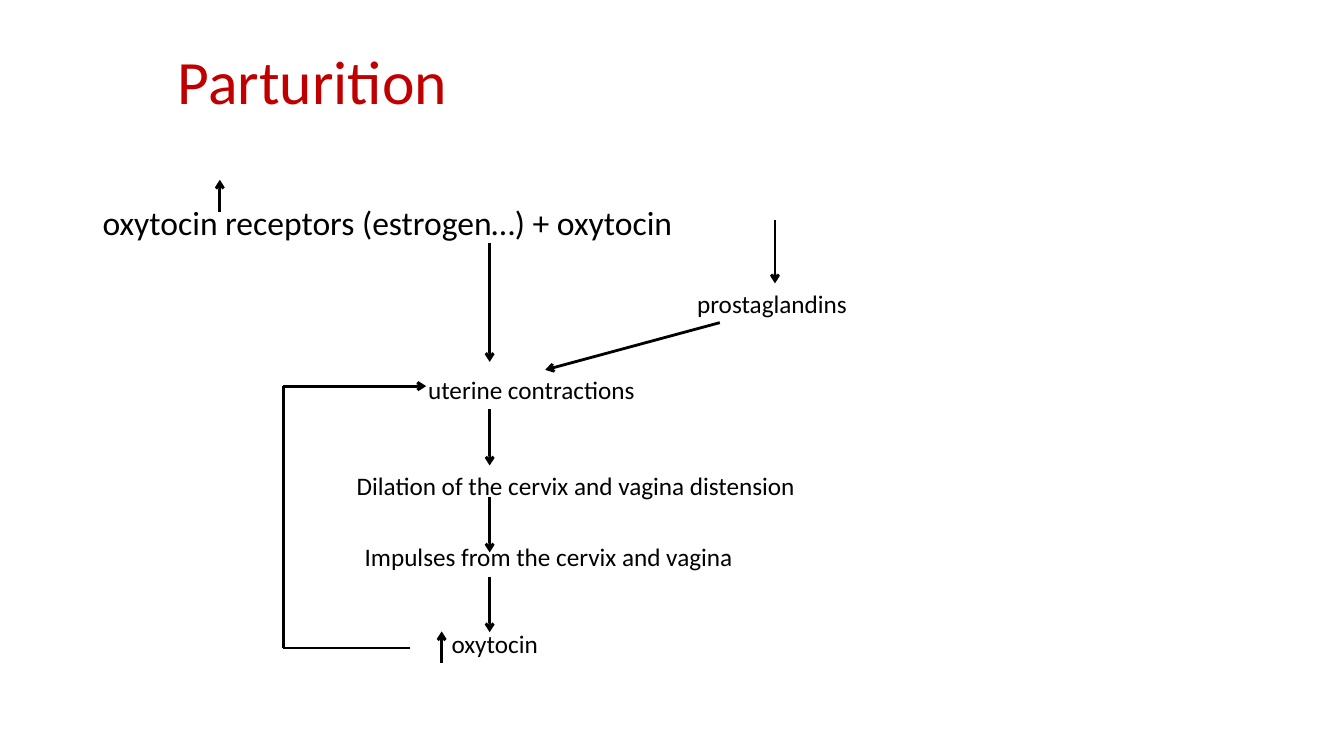
import dataclasses

import pptx
import pptx.dml.color
import pptx.enum.shapes
import pptx.enum.text
import pptx.oxml
import pptx.oxml.ns
import pptx.util
from pptx.util import Cm


@dataclasses.dataclass(frozen=True)
class Theme:
    """Colours, type sizes and line width of the slide."""
    font: str = "Calibri"
    title_color: str = "C00000"
    ink: str = "000000"
    title_size: int = 44
    body_size: int = 24
    label_size: int = 18
    line_width: int = 2


THEME = Theme()


def add_element(parent, tag, **attrs):
    """Append a DrawingML element to the parent."""
    el = pptx.oxml.parse_xml(f"<{tag} {pptx.oxml.ns.nsdecls('a')}/>")
    for name, value in attrs.items():
        el.set(name, value)
    parent.append(el)


def write(shape, text, size, color):
    """Put one left-aligned paragraph in the shape and return it."""
    tf = shape.text_frame
    tf.word_wrap = True
    tf.text = text
    p = tf.paragraphs[0]
    p.alignment = pptx.enum.text.PP_ALIGN.LEFT
    p.font.name = THEME.font
    p.font.size = pptx.util.Pt(size)
    p.font.color.rgb = pptx.dml.color.RGBColor.from_string(color)
    return p


def fill_placeholder(shape, box, text, size, color):
    """Move a placeholder to the box and write its text."""
    shape.left, shape.top, shape.width, shape.height = map(Cm, box)
    p = write(shape, text, size, color)
    p.line_spacing = 0.9
    shape.text_frame.auto_size = pptx.enum.text.MSO_AUTO_SIZE.NONE
    return p


def add_label(s, text, left, top, width):
    """Add one step of the flow as a text box."""
    box = s.shapes.add_textbox(Cm(left), Cm(top), Cm(width), Cm(1.02))
    write(box, text, THEME.label_size, THEME.ink)


def add_line(s, x1, y1, x2, y2, arrow=True):
    """Draw a straight line, with an arrowhead at its end if wanted."""
    line = s.shapes.add_connector(
        pptx.enum.shapes.MSO_CONNECTOR.STRAIGHT, Cm(x1), Cm(y1), Cm(x2), Cm(y2))
    line.line.color.rgb = pptx.dml.color.RGBColor.from_string(THEME.ink)
    line.line.width = pptx.util.Pt(THEME.line_width)
    if arrow:
        add_element(line.line._get_or_add_ln(), "a:tailEnd", type="arrow")
    add_element(line._element.spPr, "a:effectLst")


def main():
    """Build the parturition slide."""
    prs = pptx.Presentation()
    prs.slide_width, prs.slide_height = Cm(33.87), Cm(19.05)
    s = prs.slides.add_slide(prs.slide_layouts[1])

    title, body = s.placeholders
    fill_placeholder(title, (4.23, 0.53, 22.86, 3.18), "Parturition",
                     THEME.title_size, THEME.title_color)
    title.text_frame.vertical_anchor = pptx.enum.text.MSO_ANCHOR.MIDDLE
    p = fill_placeholder(body, (2.33, 5.08, 29.21, 12.09),
                         "oxytocin receptors (estrogen…) + oxytocin",
                         THEME.body_size, THEME.ink)
    p.space_before = pptx.util.Pt(10)
    pPr = p._p.get_or_add_pPr()
    pPr.set("marL", str(Cm(0.64)))
    pPr.set("indent", str(-Cm(0.64)))
    bullet = pptx.oxml.parse_xml(f"<a:buNone {pptx.oxml.ns.nsdecls('a')}/>")
    pPr.find(pptx.oxml.ns.qn("a:defRPr")).addprevious(bullet)

    for text, left, top, width in (
            ("prostaglandins", 17.32, 7.14, 5.41),
            ("uterine contractions", 10.54, 9.32, 8),
            ("Dilation of the cervix and vagina distension", 8.74, 11.73, 14.81),
            ("Impulses from the cervix and vagina", 8.94, 13.51, 18.21),
            ("oxytocin", 11.13, 15.72, 9.19)):
        add_label(s, text, left, top, width)

    flow_x = 12.34
    for top, bottom in ((6.12, 9.12), (10.31, 11.73), (12.52, 13.92), (14.53, 15.93)):
        add_line(s, flow_x, top, flow_x, bottom)

    for x, bottom in ((5.54, 5.33), (11.13, 16.71)):
        add_line(s, x, bottom, x, bottom - 0.8)

    add_line(s, 19.53, 5.54, 19.53, 7.14)
    add_line(s, 18.14, 8.13, 13.74, 9.32)

    loop_x, loop_top, loop_bottom = 7.14, 9.73, 16.33
    add_line(s, 10.34, loop_bottom, loop_x, loop_bottom, arrow=False)
    add_line(s, loop_x, loop_top, loop_x, loop_bottom, arrow=False)
    add_line(s, loop_x, loop_top, 10.74, loop_top)

    prs.save("out.pptx")


if __name__ == "__main__":
    main()
